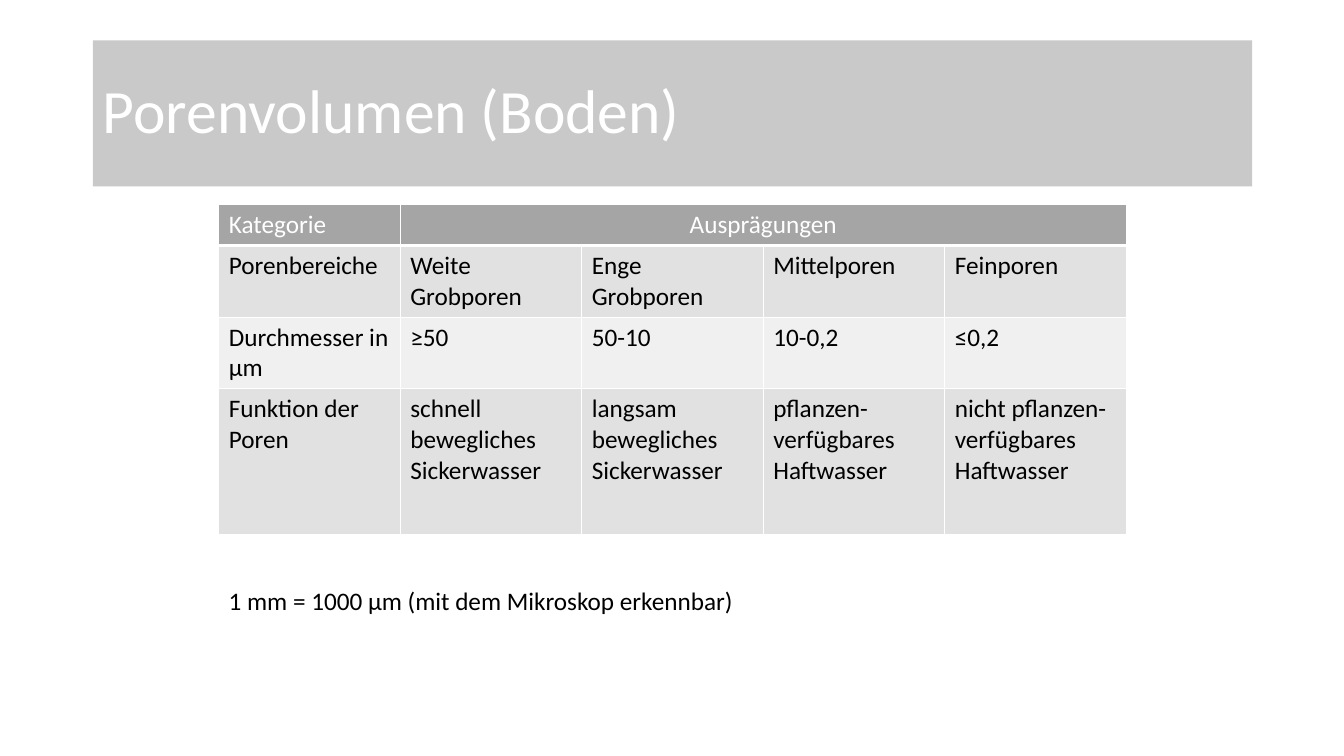
"""Build a slide with a table of soil pore sizes and their functions."""
import pptx
import pptx.dml.color
import pptx.enum.text
import pptx.oxml
import pptx.oxml.ns
import pptx.util
from pptx.util import Inches

COLORS = {
    "white": "FFFFFF",
    "black": "000000",
    "title": "C9C9C9",
    "header": "A5A5A5",
    "dark_band": "E1E1E1",
    "light_band": "F0F0F0",
}
ALIGN = pptx.enum.text.PP_ALIGN
ANCHOR = pptx.enum.text.MSO_ANCHOR


def rgb(name):
    return pptx.dml.color.RGBColor.from_string(COLORS[name])


def write(frame, text, size=18, color="black", align=ALIGN.LEFT, anchor=ANCHOR.TOP, spacing=1.0):
    frame.word_wrap = True
    frame.vertical_anchor = anchor
    para = frame.paragraphs[0]
    para.text = text
    para.alignment = align
    para.line_spacing = spacing
    for span in para.runs:
        span.font.name = "Calibri"
        span.font.size = pptx.util.Pt(size)
        span.font.color.rgb = rgb(color)


deck = pptx.Presentation()
deck.slide_width = Inches(13.33)
deck.slide_height = Inches(7.5)
page = deck.slides.add_slide(deck.slide_layouts[5])

title = page.shapes.title
title.left, title.top = Inches(0.92), Inches(0.4)
title.width, title.height = Inches(11.5), Inches(1.45)
title.fill.solid()
title.fill.fore_color.rgb = rgb("title")
write(title.text_frame, "Porenvolumen (Boden)", size=44, color="white", anchor=ANCHOR.MIDDLE, spacing=0.9)
title.text_frame.auto_size = pptx.enum.text.MSO_AUTO_SIZE.NONE

rows = [
    ["Kategorie", "Ausprägungen", "", "", ""],
    ["Porenbereiche", "Weite Grobporen", "Enge Grobporen", "Mittelporen", "Feinporen"],
    ["Durchmesser in µm", "≥50", "50-10", "10-0,2", "≤0,2"],
    [
        "Funktion der Poren",
        "schnell bewegliches Sickerwasser",
        "langsam bewegliches Sickerwasser",
        "pflanzen-\nverfügbares Haftwasser",
        "nicht pflanzen-\nverfügbares Haftwasser",
    ],
]
heights = [0.4, 0.71, 0.71, 1.45]
bands = ["header", "dark_band", "light_band", "dark_band"]

table = page.shapes.add_table(
    len(rows), len(rows[0]), Inches(2.17), Inches(2.03), Inches(9), Inches(sum(heights))
).table
for column in table.columns:
    column.width = Inches(1.8)
table.cell(0, 1).merge(table.cell(0, 4))

for row_index, (texts, height, band) in enumerate(zip(rows, heights, bands)):
    table.rows[row_index].height = Inches(height)
    is_header = row_index == 0
    for column_index, text in enumerate(texts):
        cell = table.cell(row_index, column_index)
        properties = cell._tc.get_or_add_tcPr()
        for side in "LRTB":
            points = 3 if is_header and side == "B" else 1
            properties.append(pptx.oxml.parse_xml(
                f'<a:ln{side} {pptx.oxml.ns.nsdecls("a")} w="{pptx.util.Pt(points)}">'
                f'<a:solidFill><a:srgbClr val="{COLORS["white"]}"/></a:solidFill></a:ln{side}>'
            ))
        cell.fill.solid()
        cell.fill.fore_color.rgb = rgb(band)
        if text:
            write(
                cell.text_frame,
                text,
                color="white" if is_header else "black",
                align=ALIGN.CENTER if is_header and column_index else ALIGN.LEFT,
            )

note = page.shapes.add_textbox(Inches(2.17), Inches(5.76), Inches(6.53), Inches(0.71))
write(note.text_frame, "1 mm = 1000 µm (mit dem Mikroskop erkennbar)")

deck.save("out.pptx")
